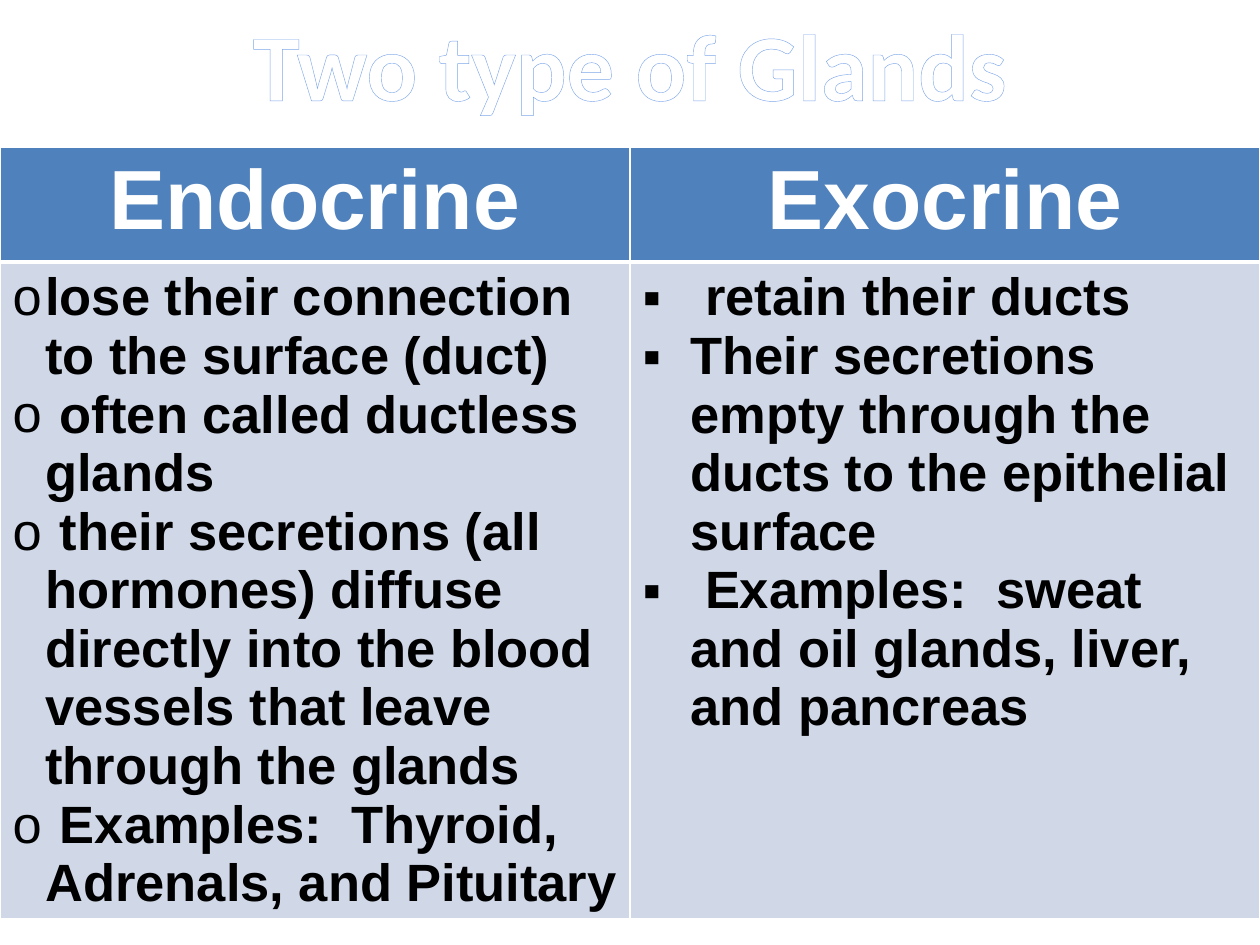
"""Build a slide that compares endocrine and exocrine glands in a table."""
import lxml.etree
import pptx
import pptx.dml.color
import pptx.enum.text
import pptx.oxml.ns
import pptx.util
from pptx.util import Inches

WHITE = pptx.dml.color.RGBColor(0xFF, 0xFF, 0xFF)
BLACK = pptx.dml.color.RGBColor(0x00, 0x00, 0x00)
HEADER_BLUE = pptx.dml.color.RGBColor(0x4F, 0x81, 0xBD)
BODY_BLUE = pptx.dml.color.RGBColor(0xD0, 0xD8, 0xE8)
OUTLINE_BLUE = pptx.dml.color.RGBColor(0x7E, 0xA6, 0xEA)

GLANDS = [
    ("Endocrine", "o", 0.26, [
        "lose their connection to the surface (duct)",
        " often called ductless glands",
        " their secretions (all hormones) diffuse directly into the blood "
        "vessels that leave through the glands",
        " Examples:  Thyroid, Adrenals, and Pituitary",
    ]),
    ("Exocrine", "▪", 0.38, [
        " retain their ducts",
        "Their secretions empty through the ducts to the epithelial surface",
        " Examples:  sweat and oil glands, liver, and pancreas",
    ]),
]


def add_line(parent, tag, color, width, index):
    line = lxml.etree.Element(pptx.oxml.ns.qn(tag), w=str(pptx.util.Pt(width)))
    fill = lxml.etree.SubElement(line, pptx.oxml.ns.qn("a:solidFill"))
    lxml.etree.SubElement(fill, pptx.oxml.ns.qn("a:srgbClr"), val=str(color))
    parent.insert(index, line)


def style_font(paragraph, name, size, color):
    paragraph.font.name = name
    paragraph.font.size = pptx.util.Pt(size)
    paragraph.font.bold = True
    paragraph.font.color.rgb = color


presentation = pptx.Presentation()
presentation.slide_width = Inches(10)
presentation.slide_height = Inches(7.5)
slide = presentation.slides.add_slide(presentation.slide_layouts[5])

title = slide.shapes.title
title.left, title.top, title.width, title.height = (
    Inches(0), Inches(0), Inches(10), Inches(1.01))
title.text_frame.text = "Two type of Glands"
title.text_frame.vertical_anchor = pptx.enum.text.MSO_ANCHOR.TOP
heading = title.text_frame.paragraphs[0]
heading.alignment = pptx.enum.text.PP_ALIGN.CENTER
style_font(heading, "Calibri", 54, WHITE)
add_line(heading.runs[0].font._element, "a:ln", OUTLINE_BLUE, 2.48, 0)

comparison = slide.shapes.add_table(
    2, 2, Inches(0), Inches(1.17), Inches(10), Inches(5.98)).table
comparison.rows[0].height = Inches(0.91)
comparison.rows[1].height = Inches(5.07)

for column, (gland, bullet, indent, facts) in enumerate(GLANDS):
    header, body = comparison.cell(0, column), comparison.cell(1, column)
    for cell, color, top, bottom in (
            (header, HEADER_BLUE, 1, 3), (body, BODY_BLUE, 3, 1)):
        properties = cell._tc.get_or_add_tcPr()
        edges = (("a:lnL", 1), ("a:lnR", 1), ("a:lnT", top), ("a:lnB", bottom))
        for index, (edge, width) in enumerate(edges):
            add_line(properties, edge, WHITE, width, index)
        cell.fill.solid()
        cell.fill.fore_color.rgb = color

    header.text = gland
    header_paragraph = header.text_frame.paragraphs[0]
    header_paragraph.alignment = pptx.enum.text.PP_ALIGN.CENTER
    style_font(header_paragraph, "Arial", 48, WHITE)

    body.text = "\n".join(facts)
    for fact in body.text_frame.paragraphs:
        style_font(fact, "Arial", 30, BLACK)
        settings = fact._p.get_or_add_pPr()
        settings.set("marL", str(Inches(indent)))
        settings.set("indent", str(-Inches(indent)))
        bullet_font = lxml.etree.Element(
            pptx.oxml.ns.qn("a:buFont"), typeface="Arial")
        bullet_mark = lxml.etree.Element(
            pptx.oxml.ns.qn("a:buChar"), char=bullet)
        settings.insert(0, bullet_font)
        settings.insert(1, bullet_mark)

presentation.save("out.pptx")
